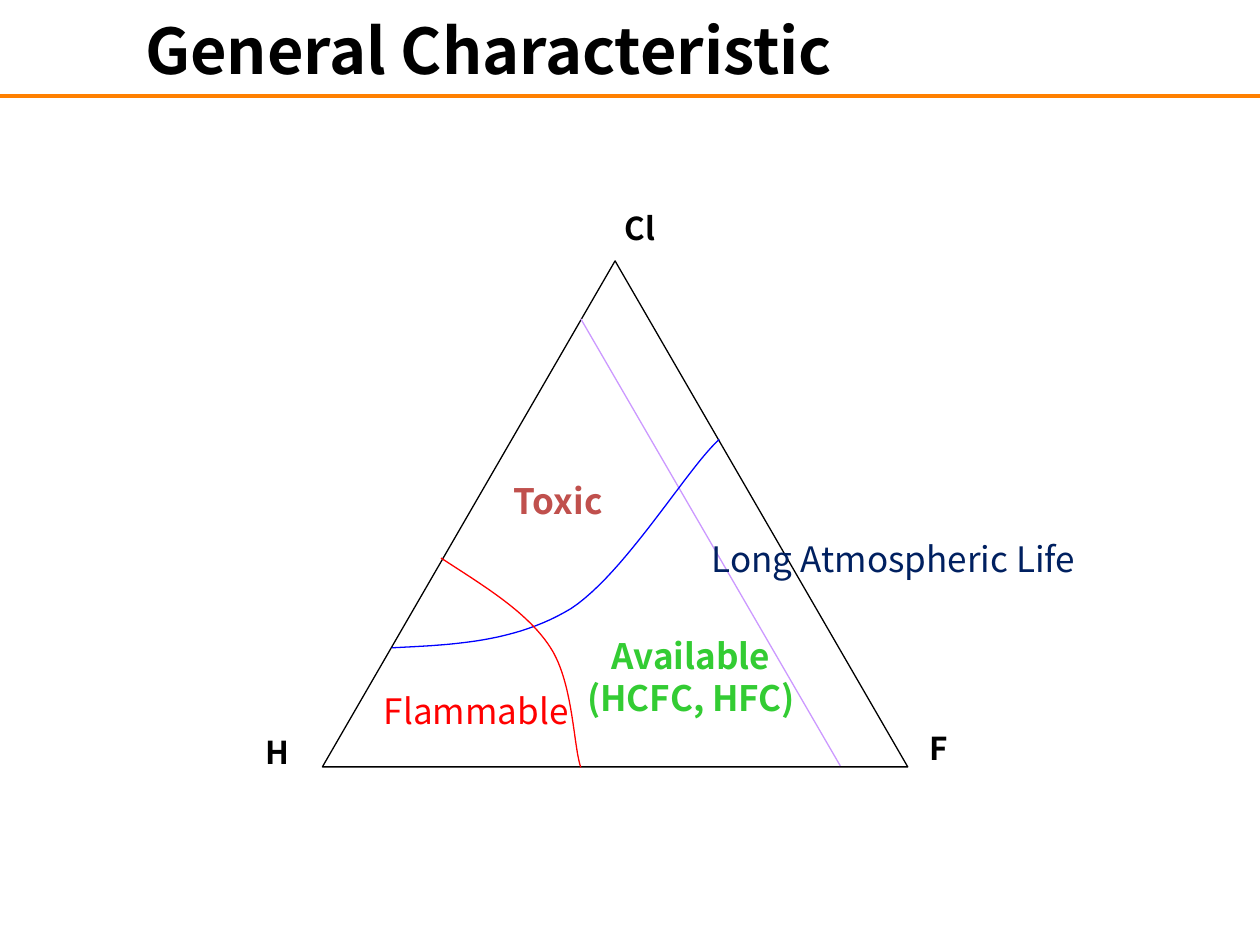
"""Build the slide on the general characteristics of refrigerants."""
from dataclasses import dataclass

from lxml import etree
from pptx import Presentation
from pptx.dml.color import RGBColor
from pptx.enum import shapes, text
from pptx.oxml.ns import qn
from pptx.util import Cm, Pt

Point = tuple[float, float]


@dataclass(frozen=True)
class Theme:
    font: str = "Noto Sans CJK KR"
    title_size: int = 36
    region_size: int = 20
    corner_size: int = 18
    black: str = "000000"
    white: str = "FFFFFF"
    rule: str = "FF8000"
    violet: str = "CC99FF"
    blue: str = "0000FF"
    red: str = "FF0000"
    brick: str = "C0504D"
    navy: str = "002060"
    green: str = "33CC33"
    thin: float = 0.75
    thick: float = 2


@dataclass(frozen=True)
class Label:
    words: str
    left: float
    top: float
    width: float
    height: float
    color: str
    size: int
    bold: bool = True
    centered: bool = False


@dataclass(frozen=True)
class Curve:
    color: str
    start: Point
    segments: tuple[tuple[Point, Point, Point], ...]


THEME = Theme()
REGION = THEME.region_size
CORNER = THEME.corner_size

CURVES = (
    Curve(THEME.blue, (7.9, 13.06), (
        ((9.14, 13), (10.39, 12.95), (11.51, 12.27)),
        ((12.6, 11.56), (13.87, 9.42), (14.5, 8.86)),
    )),
    Curve(THEME.red, (8.89, 11.25), (
        ((9.75, 11.81), (10.64, 12.34), (11.1, 13.06)),
        ((11.56, 13.77), (11.56, 15.06), (11.71, 15.47)),
    )),
)
INNER_LABELS = (
    Label("Flammable", 7.49, 13.77, 6.2, 1.09, THEME.red, REGION, bold=False),
    Label("Toxic", 10.11, 9.55, 4.39, 1.09, THEME.brick, REGION),
)
OUTER_LABELS = (
    Label("Long Atmospheric Life", 14.1, 10.72, 9.6, 1.09, THEME.navy, REGION, bold=False),
    Label("Available\n(HCFC, HFC)", 11.13, 12.67, 5.61, 2.36, THEME.green, REGION, centered=True),
    Label("F", 18.49, 14.58, 2.79, 1.27, THEME.black, CORNER),
    Label("H", 5.11, 14.66, 2.79, 1.27, THEME.black, CORNER),
    Label("Cl", 12.34, 4.09, 2.79, 1.27, THEME.black, CORNER),
)


def style_line(shape, color: str, width: float) -> None:
    """Give an outline its colour and width."""
    shape.line.color.rgb = RGBColor.from_string(color)
    shape.line.width = Pt(width)


def style_text(text_frame, color: str, size: int, bold: bool, centered: bool) -> None:
    """Format every run of a text frame."""
    for paragraph in text_frame.paragraphs:
        paragraph.alignment = text.PP_ALIGN.CENTER if centered else text.PP_ALIGN.LEFT
        for run in paragraph.runs:
            run.font.name = THEME.font
            run.font.size = Pt(size)
            run.font.bold = bold
            run.font.color.rgb = RGBColor.from_string(color)


def draw_line(parent, start: Point, end: Point, color: str, width: float) -> None:
    """Draw a straight line without a shadow."""
    line = parent.add_connector(
        shapes.MSO_CONNECTOR.STRAIGHT, *(Cm(value) for value in start + end))
    style_line(line, color, width)
    etree.SubElement(line._element.spPr, qn("a:effectLst"))


def bezier_point(corners: tuple[Point, ...], t: float) -> Point:
    """Return the point at t on a cubic Bezier segment."""
    weights = ((1 - t) ** 3, 3 * t * (1 - t) ** 2, 3 * t ** 2 * (1 - t), t ** 3)
    x, y = (sum(w * c[axis] for w, c in zip(weights, corners)) for axis in (0, 1))
    return x, y


def draw_curve(parent, curve: Curve, steps: int = 24) -> None:
    """Draw a smooth open boundary."""
    points = []
    start = curve.start
    for segment in curve.segments:
        points += [bezier_point((start, *segment), i / steps) for i in range(1, steps + 1)]
        start = segment[-1]
    builder = parent.build_freeform(*(Cm(value) for value in curve.start))
    builder.add_line_segments([(Cm(x), Cm(y)) for x, y in points], close=False)
    shape = builder.convert_to_shape()
    shape.shadow.inherit = False
    shape.fill.background()
    style_line(shape, curve.color, THEME.thin)


def draw_label(parent, label: Label) -> None:
    """Draw a text label."""
    box = parent.add_textbox(
        Cm(label.left), Cm(label.top), Cm(label.width), Cm(label.height))
    text_frame = box.text_frame
    text_frame.word_wrap = True
    text_frame.auto_size = text.MSO_AUTO_SIZE.SHAPE_TO_FIT_TEXT
    text_frame.text = label.words
    style_text(text_frame, label.color, label.size, label.bold, label.centered)


def draw_title(slide, words: str) -> None:
    """Place and format the title placeholder."""
    title = slide.shapes.title
    title.left, title.top, title.width, title.height = Cm(0), Cm(0), Cm(19.7), Cm(2)
    title.text_frame.text = words
    title.text_frame.vertical_anchor = text.MSO_ANCHOR.MIDDLE
    style_text(title.text_frame, THEME.black, THEME.title_size, True, True)


def draw_diagram(slide) -> None:
    """Draw the triangle with its boundaries and inner labels."""
    parent = slide.shapes.add_group_shape().shapes
    triangle = parent.add_shape(
        shapes.MSO_SHAPE.ISOSCELES_TRIANGLE, Cm(6.5), Cm(5.26), Cm(11.8), Cm(10.2))
    triangle.shadow.inherit = False
    triangle.fill.solid()
    triangle.fill.fore_color.rgb = RGBColor.from_string(THEME.white)
    style_line(triangle, THEME.black, THEME.thin)
    draw_line(parent, (11.71, 6.43), (16.94, 15.44), THEME.violet, THEME.thin)
    for curve in CURVES:
        draw_curve(parent, curve)
    for label in INNER_LABELS:
        draw_label(parent, label)


def main() -> None:
    """Build and save the presentation."""
    presentation = Presentation()
    presentation.slide_width, presentation.slide_height = Cm(25.4), Cm(19.05)
    slide = presentation.slides.add_slide(presentation.slide_layouts[5])
    draw_title(slide, "General Characteristic")
    draw_line(slide.shapes, (0, 1.93), (25.4, 1.93), THEME.rule, THEME.thick)
    draw_diagram(slide)
    for label in OUTER_LABELS:
        draw_label(slide.shapes, label)
    presentation.save("out.pptx")


if __name__ == "__main__":
    main()
